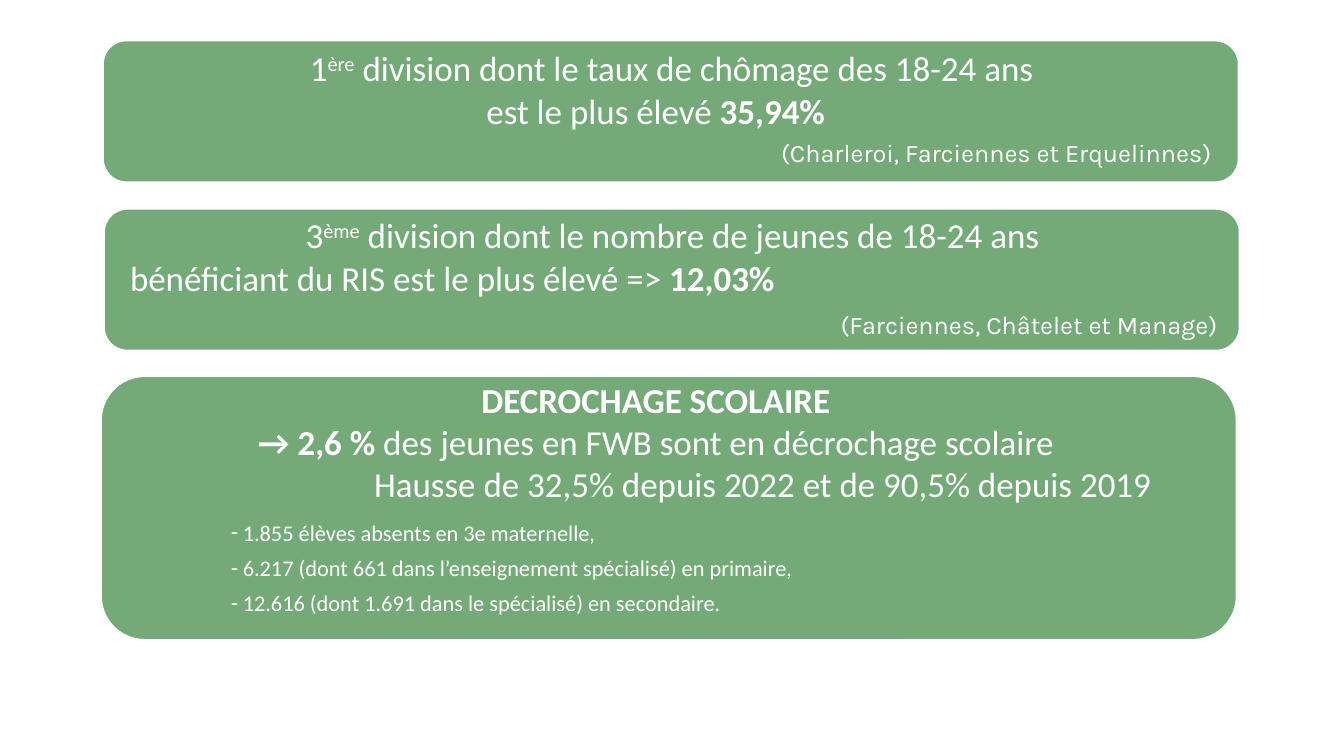
from lxml import etree
from pptx import Presentation
from pptx.dml.color import RGBColor
from pptx.enum import shapes as sh, text as tx
from pptx.oxml.ns import qn
from pptx.util import Pt

GREEN, WHITE = "74A978", "FFFFFF"
CENTER, LEFT, JUSTIFY = tx.PP_ALIGN.CENTER, tx.PP_ALIGN.LEFT, tx.PP_ALIGN.JUSTIFY


def colour(hex_value):
    return RGBColor.from_string(hex_value)


def write(frame, lines, inset=1.44):
    """Each line: runs, alignment, left margin, hanging, size, spacing, before, after."""
    frame.word_wrap = True
    frame.auto_size = tx.MSO_AUTO_SIZE.NONE
    frame.vertical_anchor = tx.MSO_ANCHOR.TOP
    frame.margin_left = frame.margin_right = Pt(inset)
    frame.margin_top = frame.margin_bottom = Pt(inset)
    for number, (runs, align, margin, hanging, size, spacing, before, after) in enumerate(lines):
        line = frame.paragraphs[0] if number == 0 else frame.add_paragraph()
        properties = line._p.get_or_add_pPr()
        properties.set("marL", str(Pt(margin)))
        properties.set("indent", str(-Pt(hanging)))
        if hanging:
            etree.SubElement(properties, qn("a:buChar")).set("char", "-")
        else:
            etree.SubElement(properties, qn("a:buNone"))
        line.alignment, line.line_spacing = align, spacing
        line.space_before, line.space_after = Pt(before), Pt(after)
        for words, style in runs:
            run = line.add_run()
            run.text = words
            run.font.name, run.font.size = "Calibri", Pt(size)
            run.font.color.rgb = colour(WHITE)
            run.font.bold = style == "bold"
            if style == "super":
                run._r.get_or_add_rPr().set("baseline", "30000")


deck = Presentation()
deck.slide_width, deck.slide_height = Pt(960), Pt(540)
slide = deck.slides.add_slide(deck.slide_layouts[1])
unemployment, dropout = slide.placeholders

# Green cards, behind the text
for left, top, height in [(72, 268.56, 188.64), (74.16, 149.04, 101.52), (73.44, 28.8, 101.52)]:
    card = slide.shapes.add_shape(sh.MSO_SHAPE.ROUNDED_RECTANGLE,
                                  Pt(left), Pt(top), Pt(811.44), Pt(height))
    card.shadow.inherit = False
    card.fill.solid()
    card.fill.fore_color.rgb = colour(GREEN)
    card.line.color.rgb = colour(WHITE)
    card.line.width = Pt(1.5)
    unemployment.element.addprevious(card.element)

# Statement boxes
income = slide.shapes.add_textbox(0, 0, 0, 0)
for box, top, width, height in [(unemployment, 35.28, 753.84, 95.76),
                                (income, 154.8, 777.6, 67.68),
                                (dropout, 272.16, 753.84, 205.92)]:
    box.left, box.top, box.width, box.height = Pt(91.44), Pt(top), Pt(width), Pt(height)

statement = (25, 0.9, 0, 3.25)
detail = (16, 1.07, 4.8, 0)

# Youth unemployment
write(unemployment.text_frame, [
    ([("1", ""), ("ère", "super"), (" division dont le taux de chômage des 18-24 ans", "")],
     CENTER, 22.5, 0, *statement),
    ([("est le plus élevé ", ""), ("35,94%", "bold")], CENTER, 0, 0, *statement),
])

# Income support
write(income.text_frame, [
    ([("3", ""), ("ème", "super"), (" division dont le nombre de jeunes de 18-24 ans", "")],
     CENTER, 0, 0, *statement),
    ([("bénéficiant du RIS est le plus élevé => ", ""), ("12,03%", "bold")],
     LEFT, 0, 0, *statement),
])

# School dropout
absences = ["1.855 élèves absents en 3e maternelle,",
            "6.217 (dont 661 dans l’enseignement spécialisé) en primaire,",
            "12.616 (dont 1.691 dans le spécialisé) en secondaire."]
write(dropout.text_frame, [
    ([("DECROCHAGE SCOLAIRE", "bold")], CENTER, 0, 0, *statement),
    ([("→ 2,6 % ", "bold"), ("des jeunes en FWB sont en décrochage scolaire", "")],
     CENTER, 0, 0, *statement),
    ([("Hausse de 32,5% depuis 2022 et de 90,5% depuis 2019", "")],
     CENTER, 152.5, 0, *statement),
] + [([(absence, "")], JUSTIFY, 80.5, 8.5, *detail) for absence in absences])

# Municipalities concerned
for towns, left, top in [("(Charleroi, Farciennes et Erquelinnes)", 550.8, 94.32),
                         ("(Farciennes, Châtelet et Manage)", 593.28, 217.44)]:
    places = slide.shapes.add_textbox(Pt(left), Pt(top), Pt(345), Pt(28.8)).text_frame
    places.word_wrap = True
    places.text = towns
    font = places.paragraphs[0].runs[0].font
    font.name, font.size = "Karla", Pt(18)
    font.color.rgb = colour(WHITE)

deck.save("out.pptx")
